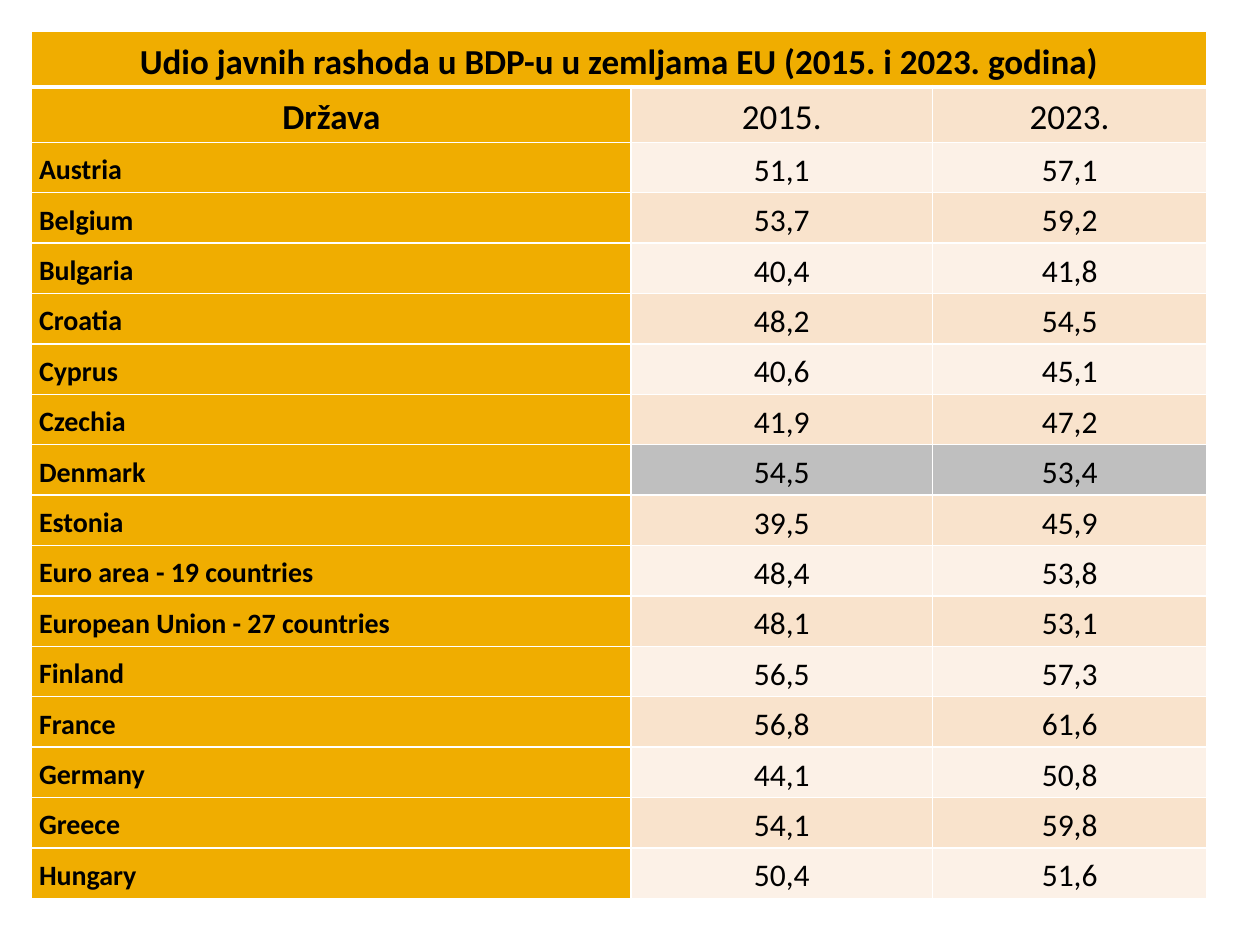
"""Build a slide with a table of public spending as a share of GDP in the EU."""
from lxml.etree import SubElement
from pptx import Presentation
from pptx.dml.color import RGBColor
from pptx.enum.text import MSO_ANCHOR, PP_ALIGN
from pptx.oxml.ns import qn
from pptx.util import Inches, Pt

TITLE = "Udio javnih rashoda u BDP-u u zemljama EU (2015. i 2023. godina)"
HEADINGS = ("Država", "2015.", "2023.")
SPENDING = [
    ("Austria", "51,1", "57,1"),
    ("Belgium", "53,7", "59,2"),
    ("Bulgaria", "40,4", "41,8"),
    ("Croatia", "48,2", "54,5"),
    ("Cyprus", "40,6", "45,1"),
    ("Czechia", "41,9", "47,2"),
    ("Denmark", "54,5", "53,4"),
    ("Estonia", "39,5", "45,9"),
    ("Euro area - 19 countries", "48,4", "53,8"),
    ("European Union - 27 countries", "48,1", "53,1"),
    ("Finland", "56,5", "57,3"),
    ("France", "56,8", "61,6"),
    ("Germany", "44,1", "50,8"),
    ("Greece", "54,1", "59,8"),
    ("Hungary", "50,4", "51,6"),
]
HIGHLIGHTED = "Denmark"
COLUMN_WIDTHS = (4.76, 2.39, 2.18)
HEADER_ROWS = 2
HEADER_HEIGHT, COUNTRY_HEIGHT = 0.44, 0.4
GOLD, GREY, WHITE, BLACK = "F0AD00", "BFBFBF", "FFFFFF", "000000"
BANDS = ("FCF1E7", "F9E3CC")


def color(value):
    return RGBColor.from_string(value)


def add_borders(cell, row):
    widths = {"L": 1, "R": 1, "T": 3 if row == 1 else 1, "B": 3 if row == 0 else 1}
    for side, width in widths.items():
        border = SubElement(cell._tc.get_or_add_tcPr(), qn(f"a:ln{side}"), w=str(Pt(width)))
        SubElement(SubElement(border, qn("a:solidFill")), qn("a:srgbClr"), val=WHITE)


def fill_for(row, column, country):
    if row == 0 or column == 0:
        return GOLD
    return GREY if country == HIGHLIGHTED else BANDS[row % 2]


def write(cell, text, size, bold, align):
    cell.margin_left = cell.margin_right = Inches(0.06)
    cell.margin_top = cell.margin_bottom = 0
    cell.vertical_anchor = MSO_ANCHOR.MIDDLE
    paragraph = cell.text_frame.paragraphs[0]
    paragraph.alignment = align
    paragraph.line_spacing = 1.15
    if text:
        run = paragraph.add_run()
        run.text = text
        run.font.name = "Calibri"
        run.font.size = Pt(size)
        run.font.bold = bold
        run.font.color.rgb = color(BLACK)


def main():
    presentation = Presentation()
    presentation.slide_width, presentation.slide_height = Inches(10), Inches(7.5)
    slide = presentation.slides.add_slide(presentation.slide_layouts[6])

    rows = [(TITLE, "", ""), HEADINGS, *SPENDING]
    heights = [HEADER_HEIGHT] * HEADER_ROWS + [COUNTRY_HEIGHT] * len(SPENDING)
    table = slide.shapes.add_table(
        len(rows), len(COLUMN_WIDTHS), Inches(0.25), Inches(0.25),
        Inches(sum(COLUMN_WIDTHS)), Inches(sum(heights)),
    ).table
    for column, width in zip(table.columns, COLUMN_WIDTHS):
        column.width = Inches(width)
    for row, height in zip(table.rows, heights):
        row.height = Inches(height)
    table.cell(0, 0).merge(table.cell(0, len(COLUMN_WIDTHS) - 1))

    for row, texts in enumerate(rows):
        for column, text in enumerate(texts):
            cell = table.cell(row, column)
            is_country = row >= HEADER_ROWS and column == 0
            size = 20 if row < HEADER_ROWS else 16 if is_country else 18
            align = PP_ALIGN.LEFT if is_country else PP_ALIGN.CENTER
            add_borders(cell, row)
            cell.fill.solid()
            cell.fill.fore_color.rgb = color(fill_for(row, column, texts[0]))
            write(cell, text, size, column == 0, align)

    presentation.save("out.pptx")


if __name__ == "__main__":
    main()
